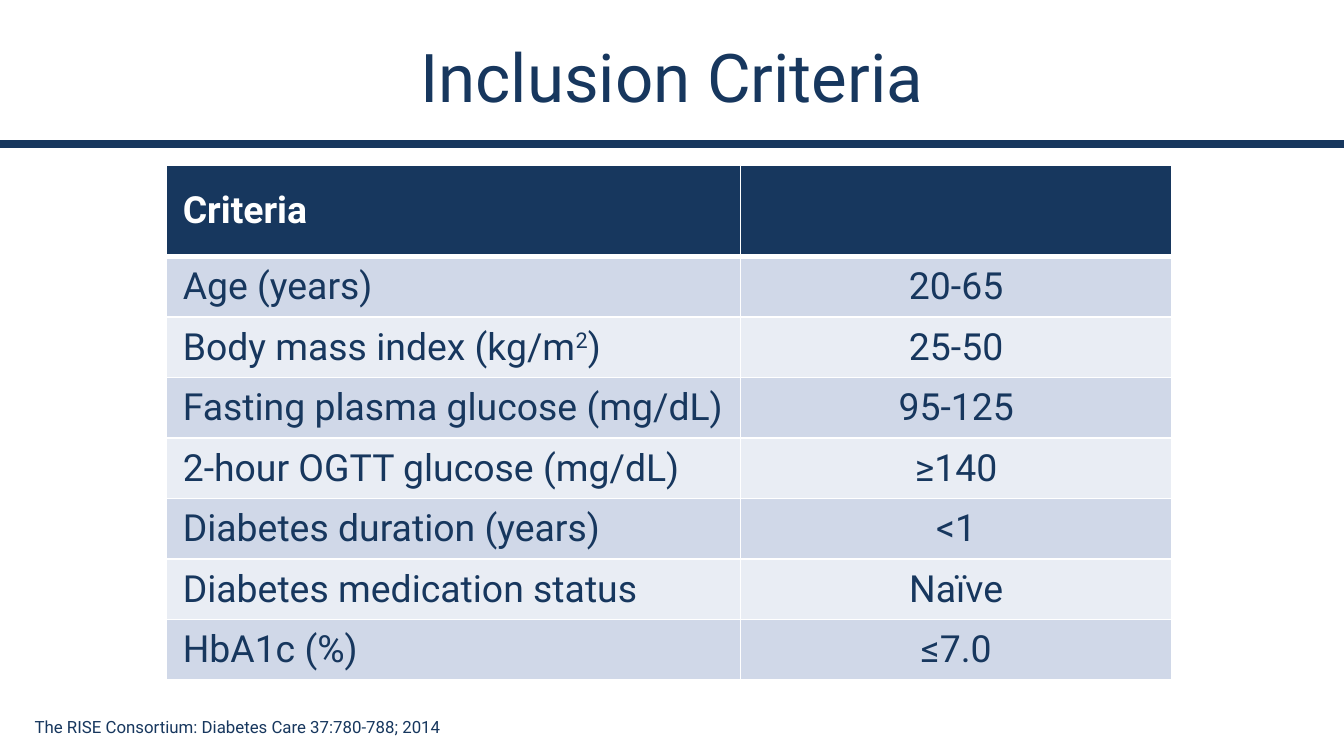
from dataclasses import dataclass

from lxml.etree import SubElement
from pptx import Presentation
from pptx.dml.color import RGBColor
from pptx.enum.shapes import MSO_CONNECTOR as Connector
from pptx.enum.text import MSO_ANCHOR as Anchor, PP_ALIGN as Align
from pptx.oxml import parse_xml
from pptx.oxml.ns import nsdecls, qn
from pptx.util import Inches, Pt

FONT = "Roboto"
COLORS = {"navy": "17375E", "white": "FFFFFF", "dark_band": "D0D8E8", "light_band": "E9EDF4"}


@dataclass
class Criterion:
    label: str
    value: str
    exponent: str = ""
    ending: str = ""


CRITERIA = [
    Criterion("Age (years)", "20-65"),
    Criterion("Body mass index (kg/m", "25-50", "2", ")"),
    Criterion("Fasting plasma glucose (mg/dL)", "95-125"),
    Criterion("2-hour OGTT glucose (mg/dL)", "≥140"),
    Criterion("Diabetes duration (years)", "<1"),
    Criterion("Diabetes medication status", "Naïve"),
    Criterion("HbA1c (%)", "≤7.0"),
]


def color(name: str) -> RGBColor:
    return RGBColor.from_string(COLORS[name])


def format_runs(para, size: float, color_name: str = "navy", bold: bool = False) -> None:
    for span in para.runs:
        span.font.name = FONT
        span.font.size = Pt(size)
        span.font.bold = bold
        span.font.color.rgb = color(color_name)


def style_cell(cell, fill: str, bottom_width: float = 1, top_width: float = 1) -> None:
    cell.vertical_anchor = Anchor.MIDDLE
    cell.margin_left = cell.margin_right = Inches(0.05)
    cell.margin_top = cell.margin_bottom = Inches(0.05)
    cell.fill.solid()
    cell.fill.fore_color.rgb = color(fill)
    # Borders come before the fill in the cell properties
    properties = cell._tc.get_or_add_tcPr()
    widths = {"lnL": 1, "lnR": 1, "lnT": top_width, "lnB": bottom_width}
    for index, (side, width) in enumerate(widths.items()):
        properties.insert(index, parse_xml(
            f'<a:{side} {nsdecls("a")} w="{Pt(width)}"><a:solidFill>'
            f'<a:srgbClr val="{COLORS["white"]}"/></a:solidFill></a:{side}>'))


def write_cell(cell, text: str, align: Align, color_name: str = "navy", bold: bool = False) -> None:
    if align == Align.LEFT:
        cell.margin_left = Inches(0.12)
    para = cell.text_frame.paragraphs[0]
    para.text = text
    para.alignment = align
    format_runs(para, 20, color_name, bold)


def add_exponent(para, exponent: str, ending: str) -> None:
    for text in (exponent, ending):
        para.add_run().text = text
    format_runs(para, 20)
    para.runs[1]._r.get_or_add_rPr().set("baseline", "30000")


def add_criteria_table(page) -> None:
    table = page.shapes.add_table(len(CRITERIA) + 1, 2, Inches(1.24), Inches(1.23),
                                  Inches(7.48), Inches(3.83)).table
    for column, width in zip(table.columns, (4.27, 3.21)):
        column.width = Inches(width)
    for index, row in enumerate(table.rows):
        row.height = Inches(0.45 if index else 0.68)

    # Header row
    for cell in table.rows[0].cells:
        style_cell(cell, "navy", bottom_width=3)
    write_cell(table.cell(0, 0), "Criteria", Align.LEFT, "white", bold=True)

    # Banded body rows
    for index, criterion in enumerate(CRITERIA, start=1):
        label, value = table.rows[index].cells
        for cell in (label, value):
            style_cell(cell, "dark_band" if index % 2 else "light_band",
                       top_width=3 if index == 1 else 1)
        write_cell(label, criterion.label, Align.LEFT)
        write_cell(value, criterion.value, Align.CENTER)
        if criterion.exponent:
            add_exponent(label.text_frame.paragraphs[0], criterion.exponent, criterion.ending)


def main() -> None:
    # Widescreen page, 16:9
    deck = Presentation()
    deck.slide_width, deck.slide_height = Inches(10), Inches(10 * 9 / 16)
    page = deck.slides.add_slide(deck.slide_layouts[5])

    # Title
    title = page.shapes.title
    title.left, title.top = Inches(0.5), Inches(0.09)
    title.width, title.height = Inches(9), Inches(0.94)
    title.text_frame.text = "Inclusion Criteria"
    title.text_frame.vertical_anchor = Anchor.MIDDLE
    title.text_frame.paragraphs[0].alignment = Align.CENTER
    format_runs(title.text_frame.paragraphs[0], 36)

    # Rule under the title
    rule = page.shapes.add_connector(Connector.STRAIGHT, 0, Inches(1.07), Inches(10.01), Inches(1.07))
    rule.line.color.rgb = color("navy")
    rule.line.width = Pt(4.5)
    SubElement(rule._element.spPr, qn("a:effectLst"))

    add_criteria_table(page)

    # Source citation
    citation = page.shapes.add_textbox(Inches(0.16), Inches(5.28), Inches(3.36), Inches(0.25))
    citation.text_frame.text = "The RISE Consortium: Diabetes Care 37:780-788; 2014"
    citation.text_frame.word_wrap = False
    format_runs(citation.text_frame.paragraphs[0], 9)

    deck.save("out.pptx")


if __name__ == "__main__":
    main()
